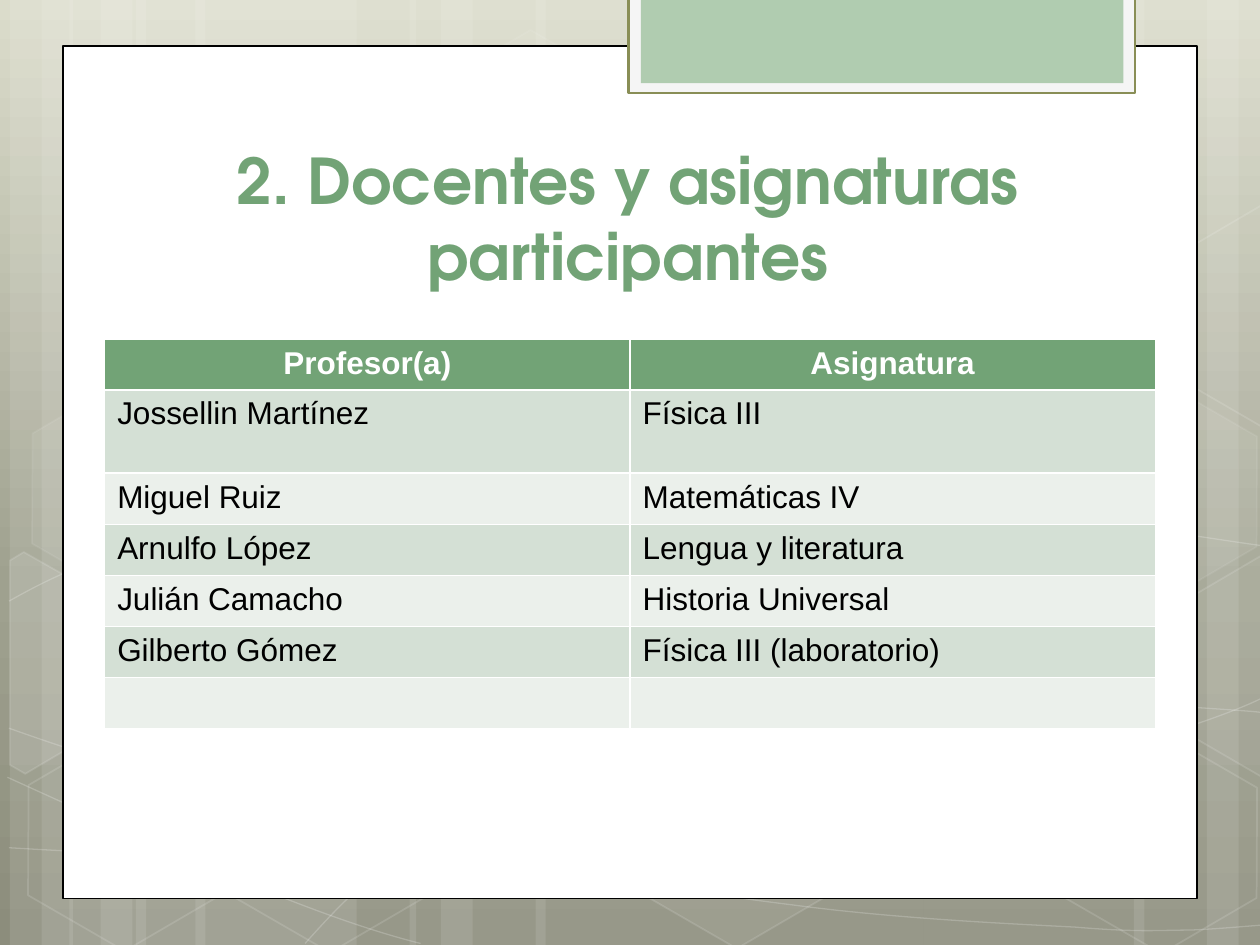
from copy import deepcopy
from dataclasses import dataclass
from typing import Optional

from lxml.etree import SubElement
from pptx import Presentation
from pptx.dml.color import RGBColor
from pptx.enum.shapes import MSO_SHAPE
from pptx.enum.text import MSO_ANCHOR, PP_ALIGN
from pptx.oxml.ns import qn
from pptx.util import Cm, Pt

COLORS = {
    "white": "FFFFFF", "black": "000000", "green": "72A376",
    "mint": "B0CCB0", "olive": "898E56", "tab": "F5F5F5",
    "band_dark": "D4E0D5", "band_light": "EBF0EB",
    "sky": "DBDCCB", "stone": "9FA18F", "earth": "8C8D7C",
}
BACKGROUND = [(0, "sky"), (0.62, "stone"), (1, "earth")]


@dataclass
class Style:
    fill: Optional[str] = None
    fill_alpha: int = 100
    line: Optional[str] = None
    line_width: float = 1
    line_alpha: int = 100


@dataclass
class Box:
    x: float
    y: float
    w: float
    h: float


@dataclass
class Hexagon:
    x: float
    y: float
    fill_alpha: int
    line_alpha: int


@dataclass
class Outline:
    points: list
    fill_alpha: int


def rgb(name: str) -> RGBColor:
    return RGBColor.from_string(COLORS[name])


def glass(fill_alpha: int, line_alpha: int) -> Style:
    """Translucent white; no fill when fill_alpha is 0."""
    return Style("white" if fill_alpha else None, fill_alpha, "white", 1, line_alpha)


def set_alpha(sp, query: str, percent: int) -> None:
    if percent < 100:
        for clr in sp.element.xpath(query):
            SubElement(clr, qn("a:alpha"), val=str(percent * 1000))


def paint(sp, style: Style) -> None:
    sp.shadow.inherit = False
    if style.fill:
        sp.fill.solid()
        sp.fill.fore_color.rgb = rgb(style.fill)
        set_alpha(sp, "./p:spPr/a:solidFill/a:srgbClr", style.fill_alpha)
    else:
        sp.fill.background()
    if style.line:
        sp.line.color.rgb = rgb(style.line)
        sp.line.width = Pt(style.line_width)
        set_alpha(sp, "./p:spPr/a:ln/a:solidFill/a:srgbClr", style.line_alpha)
    else:
        sp.line.fill.background()


def add_box(slide, box: Box, style: Style, kind=MSO_SHAPE.RECTANGLE):
    sp = slide.shapes.add_shape(kind, Cm(box.x), Cm(box.y), Cm(box.w), Cm(box.h))
    paint(sp, style)
    return sp


def add_hexagon(slide, hexagon: Hexagon) -> None:
    sp = add_box(slide, Box(hexagon.x, hexagon.y, 4.45, 3.86),
                 glass(hexagon.fill_alpha, hexagon.line_alpha), MSO_SHAPE.HEXAGON)
    sp.adjustments[0] = 0.285
    sp.rotation = 30


def add_outline(slide, points: list, style: Style, close: bool):
    pts = [(Cm(x), Cm(y)) for x, y in points]
    builder = slide.shapes.build_freeform(*pts[0])
    builder.add_line_segments(pts[1:], close=close)
    sp = builder.convert_to_shape()
    paint(sp, style)
    return sp


def add_curve(slide, segments: list, style: Style) -> None:
    """A start, then segments of one point (straight) or three (cubic curve)."""
    sp = add_outline(slide, [pt for segment in segments for pt in segment], style, False)
    lines = iter(sp.element.xpath(".//a:path/a:lnTo"))
    for segment in segments[1:]:
        parts = [next(lines) for _ in segment]
        if len(parts) == 3:
            parts[0].tag = qn("a:cubicBezTo")
            for part in parts[1:]:
                parts[0].append(part[0])
                part.getparent().remove(part)


def write(tf, text: str, *, size: float = 18, font: str = "Arial", color: str = "black",
          bold: bool = False, align=PP_ALIGN.LEFT) -> None:
    p = tf.paragraphs[0]
    p.alignment = align
    r = p.add_run()
    r.text = text
    r.font.size, r.font.name, r.font.bold = Pt(size), font, bold
    r.font.color.rgb = rgb(color)


def set_background(slide) -> None:
    fill = slide.background.fill
    fill.gradient()
    fill.gradient_angle = 270
    first = slide.element.xpath(".//p:bg//a:gs")[0]
    first.addnext(deepcopy(first))
    for stop, (position, color) in zip(fill.gradient_stops, BACKGROUND):
        stop.position = position
        stop.color.rgb = rgb(color)


# Vertical stripes: left, width
STRIPES = [(2.74, 4.45), (0.2, 1.27), (0.84, 2.11), (3.94, 4.45), (1.4, 1.27), (2.03, 2.11),
           (18.62, 4.45), (24.33, 1.27), (22.86, 2.11), (10.8, 7.82), (8.26, 1.27), (8.89, 2.11)]
CURVES = [
    [[(0.18, 17.09)],
     [(1.55, 17.17), (2.92, 17.25), (4.83, 17.22)], [(6.73, 17.2), (9.09, 17.15), (11.63, 16.89)],
     [(14.17, 16.64), (17.78, 16.15), (20.12, 15.67)], [(22.43, 15.19), (24.82, 14.43), (25.58, 14)]],
    [[(0.18, 12.12)],
     [(0.91, 11.71), (1.65, 11.33), (3.07, 10.95)], [(4.52, 10.57), (6.58, 10.06), (8.81, 9.83)],
     [(11.07, 9.65), (13.82, 9.63), (16.61, 9.83)], [(19.41, 10.03), (24.05, 10.82), (25.58, 11.02)]],
    [[(0.15, 15.67)], [(3.23, 17.07), (6.27, 18.47), (8.48, 19.02)]],
    [[(0.18, 14.68)],
     [(0.97, 14.96), (1.78, 15.24), (3.25, 15.65)], [(4.72, 16.03), (6.93, 16.66), (9.07, 17.09)],
     [(11.18, 17.53), (13.84, 17.98), (15.95, 18.24)], [(18.06, 18.52), (20.32, 18.62), (21.67, 18.69)],
     [(22.99, 18.8), (23.34, 18.75), (24, 18.75)], [(24.66, 18.72), (25.12, 18.67), (25.58, 18.64)]],
    [[(6.15, 19.02)],
     [(6.6, 18.52), (7.06, 18.01), (7.67, 17.55)], [(8.28, 17.09), (9.14, 16.61), (9.86, 16.23)],
     [(10.57, 15.88), (11, 15.72), (11.94, 15.47)], [(12.85, 15.21), (14.55, 14.86), (15.44, 14.68)],
     [(16.36, 14.5), (16.48, 14.5), (17.27, 14.45)], [(18.06, 14.38), (19.3, 14.3), (20.17, 14.27)],
     [(21.06, 14.25), (22.5, 14.27), (22.5, 14.27)], [(24.21, 14.27)],
     [(24.66, 14.3), (25.1, 14.33), (25.32, 14.35)], [(25.55, 14.38), (25.48, 14.35), (25.55, 14.38)]],
]
HEXAGONS = [Hexagon(8.48, 0.91, 4, 8), Hexagon(12.62, 14.96, 6, 12), Hexagon(0.28, 15.01, 0, 12),
            Hexagon(0.36, 7.92, 7, 8), Hexagon(4.42, 15.04, 0, 12), Hexagon(19.13, 11.51, 10, 12),
            Hexagon(21.18, 15.06, 0, 12), Hexagon(21.18, 7.98, 7, 8)]
CUT_HEXAGONS = [
    Outline([(0.2, 11.3), (0.48, 11.13), (2.44, 12.24), (2.41, 14.48), (0.51, 15.6), (0.2, 15.42)], 10),
    Outline([(23.52, 12.32), (25.43, 11.2), (25.63, 11.33), (25.63, 15.57), (25.45, 15.67), (23.52, 14.55)], 4),
    Outline([(23.52, 5.26), (25.43, 4.14), (25.65, 4.27), (25.63, 8.51), (25.45, 8.61), (23.52, 7.49)], 0),
]
# White page and the tab at its top
PANELS = [(Box(1.27, 0.93, 22.86, 17.18), Style("white", line="black", line_width=0.75)),
          (Box(12.67, -0.05, 10.21, 1.93), Style("tab", line="olive", line_width=1.25)),
          (Box(12.92, -0.05, 9.73, 1.73), Style("mint"))]
ROWS = [("Profesor(a)", "Asignatura"), ("Jossellin Martínez", "Física III"),
        ("Miguel Ruiz", "Matemáticas IV"), ("Arnulfo López", "Lengua y literatura"),
        ("Julián Camacho", "Historia Universal"), ("Gilberto Gómez", "Física III (laboratorio)"),
        ("", "")]
ROW_HEIGHTS = [1.02, 1.68] + [1.03] * 5


def add_teachers_table(slide) -> None:
    """White rules come from the default table style."""
    table = slide.shapes.add_table(len(ROWS), 2, Cm(2.11), Cm(6.84), Cm(21.18),
                                   Cm(sum(ROW_HEIGHTS))).table
    for i, (row, height) in enumerate(zip(ROWS, ROW_HEIGHTS)):
        table.rows[i].height = Cm(height)
        head = i == 0
        for j, text in enumerate(row):
            cell = table.cell(i, j)
            cell.fill.solid()
            cell.fill.fore_color.rgb = rgb("green" if head else "band_dark" if i % 2 else "band_light")
            if text:
                write(cell.text_frame, text, bold=head, color="white" if head else "black",
                      align=PP_ALIGN.CENTER if head else PP_ALIGN.LEFT)


def main() -> None:
    prs = Presentation()
    prs.slide_width, prs.slide_height = Cm(25.4), Cm(19.05)
    slide = prs.slides.add_slide(prs.slide_layouts[6])

    # Backdrop
    set_background(slide)
    for x, width in STRIPES:
        add_box(slide, Box(x, 0, width, 19.05), Style("white", 10))
    for segments in CURVES:
        add_curve(slide, segments, Style(line="white", line_width=0.75, line_alpha=20))
    for hexagon in HEXAGONS:
        add_hexagon(slide, hexagon)
    for outline in CUT_HEXAGONS:
        add_outline(slide, outline.points, glass(outline.fill_alpha, 12), True)
    for box, style in PANELS:
        add_box(slide, box, style)

    # Title
    tf = slide.shapes.add_textbox(Cm(2.9), Cm(2.85), Cm(19.51), Cm(3.18)).text_frame
    tf.word_wrap = True
    tf.vertical_anchor = MSO_ANCHOR.BOTTOM
    write(tf, "2. Docentes y asignaturas participantes", size=36, font="TeX Gyre Adventor",
          color="green", bold=True, align=PP_ALIGN.CENTER)

    add_teachers_table(slide)
    prs.save("out.pptx")


if __name__ == "__main__":
    main()
